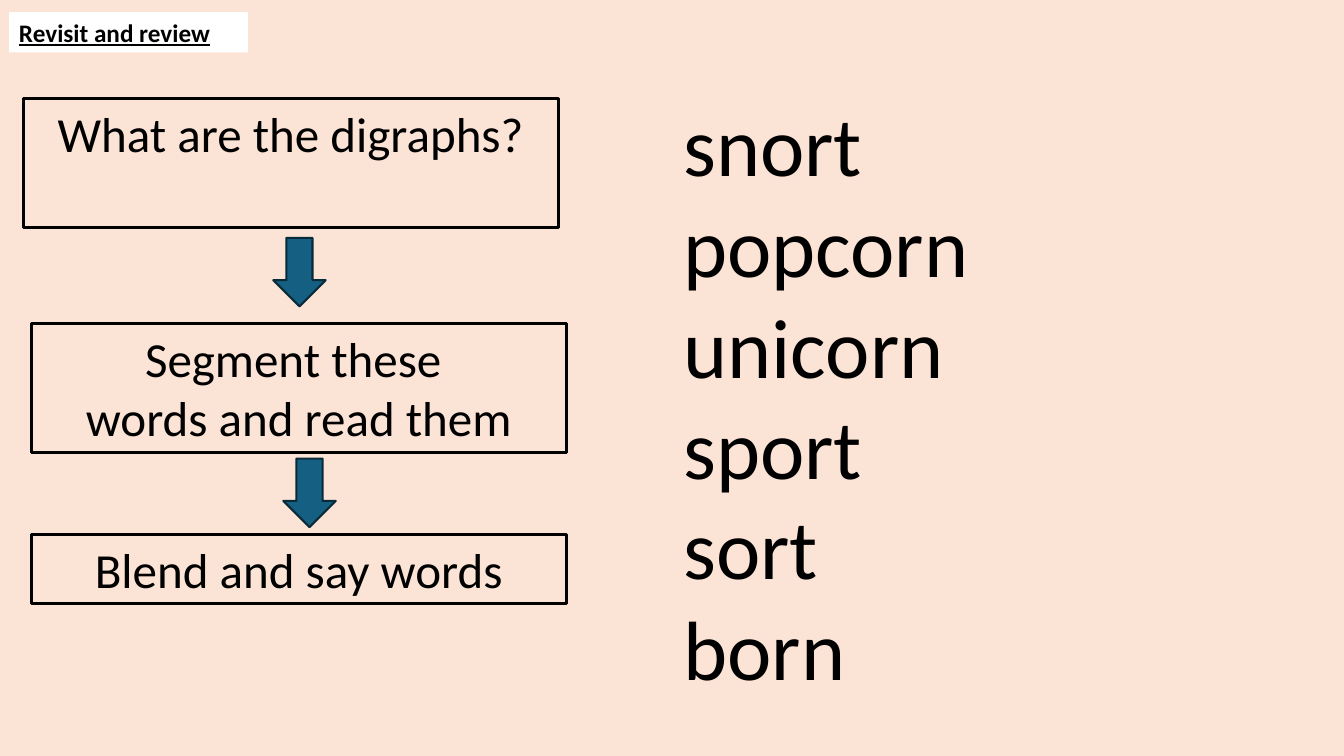
import dataclasses
import typing

import pptx
import pptx.dml.color
import pptx.enum.shapes
import pptx.enum.text
import pptx.util

Inches = pptx.util.Inches
Color = pptx.dml.color.RGBColor
Preset = pptx.enum.shapes.MSO_SHAPE
Align = pptx.enum.text.PP_ALIGN


@dataclasses.dataclass(frozen=True)
class Theme:
    """Colours, font, line widths and type sizes of the slide."""

    font: str = "Calibri"
    background: str = "FBE3D6"
    ink: str = "000000"
    label_fill: str = "FFFFFF"
    arrow_fill: str = "156082"
    arrow_line: str = "092A39"
    label_size: int = 18
    step_size: int = 35
    word_size: int = 60
    step_line: float = 2.25
    arrow_line_width: float = 1.5


@dataclasses.dataclass(frozen=True)
class Frame:
    """Place and size in inches."""

    left: float
    top: float
    width: float
    height: float


@dataclasses.dataclass(frozen=True)
class Step:
    """A boxed instruction."""

    left: float
    top: float
    height: float
    lines: tuple[str, ...]


@dataclasses.dataclass(frozen=True)
class Arrow:
    """A downward arrow between two steps."""

    left: float
    top: float


THEME = Theme()
STEP_WIDTH = 5.31
ARROW_WIDTH, ARROW_HEIGHT = 0.52, 0.68
LABEL_FRAME = Frame(0.09, 0.12, 2.37, 0.4)
WORDS_FRAME = Frame(6.68, 0.87, 8.26, 8.25)
WORDS = ("snort", "popcorn", "unicorn", "sport", "sort", "born")
STEPS = (
    Step(0.23, 0.98, 1.28, ("What are the digraphs?",)),
    Step(0.31, 3.21, 1.28, ("Segment these ", "words and read them")),
    Step(0.31, 5.3, 0.69, ("Blend and say words",)),
)
ARROWS = (Arrow(2.71, 2.36), Arrow(2.81, 4.55))


def place(frame: Frame) -> tuple[int, int, int, int]:
    """Return the frame as lengths for python-pptx."""
    return (Inches(frame.left), Inches(frame.top), Inches(frame.width), Inches(frame.height))


def add_preset(
    page: typing.Any,
    preset: Preset,
    frame: Frame,
    fill: str | None = None,
    line: str | None = None,
    line_width: float = 1,
) -> typing.Any:
    """Add a preset shape with an optional fill and outline."""
    shape = page.shapes.add_shape(preset, *place(frame))
    shape.shadow.inherit = False
    if fill:
        shape.fill.solid()
        shape.fill.fore_color.rgb = Color.from_string(fill)
    else:
        shape.fill.background()
    if line:
        shape.line.color.rgb = Color.from_string(line)
        shape.line.width = pptx.util.Pt(line_width)
    else:
        shape.line.fill.background()
    return shape


def write(
    box: typing.Any,
    lines: tuple[str, ...],
    size: int,
    align: Align = Align.LEFT,
    heading: bool = False,
) -> None:
    """Write one paragraph for each line, from the top of the box."""
    frame = box.text_frame
    frame.word_wrap = True
    frame.vertical_anchor = pptx.enum.text.MSO_ANCHOR.TOP
    for index, line in enumerate(lines):
        para = frame.add_paragraph() if index else frame.paragraphs[0]
        para.alignment = align
        span = para.add_run()
        span.text = line
        span.font.name = THEME.font
        span.font.size = pptx.util.Pt(size)
        span.font.color.rgb = Color.from_string(THEME.ink)
        if heading:
            span.font.bold = True
            span.font.underline = True


def main() -> None:
    """Build and save the slide."""
    deck = pptx.Presentation()
    deck.slide_width, deck.slide_height = Inches(13.33), Inches(7.5)
    page = deck.slides.add_slide(deck.slide_layouts[6])
    page.background.fill.solid()
    page.background.fill.fore_color.rgb = Color.from_string(THEME.background)

    label = add_preset(page, Preset.RECTANGLE, LABEL_FRAME, fill=THEME.label_fill)
    write(label, ("Revisit and review",), THEME.label_size, heading=True)

    words = page.shapes.add_textbox(*place(WORDS_FRAME))
    write(words, WORDS, THEME.word_size)

    for step in STEPS:
        frame = Frame(step.left, step.top, STEP_WIDTH, step.height)
        box = add_preset(page, Preset.RECTANGLE, frame, line=THEME.ink, line_width=THEME.step_line)
        write(box, step.lines, THEME.step_size, Align.CENTER)

    for arrow in ARROWS:
        frame = Frame(arrow.left, arrow.top, ARROW_WIDTH, ARROW_HEIGHT)
        add_preset(
            page, Preset.DOWN_ARROW, frame, THEME.arrow_fill, THEME.arrow_line, THEME.arrow_line_width
        )

    deck.save("out.pptx")


if __name__ == "__main__":
    main()
